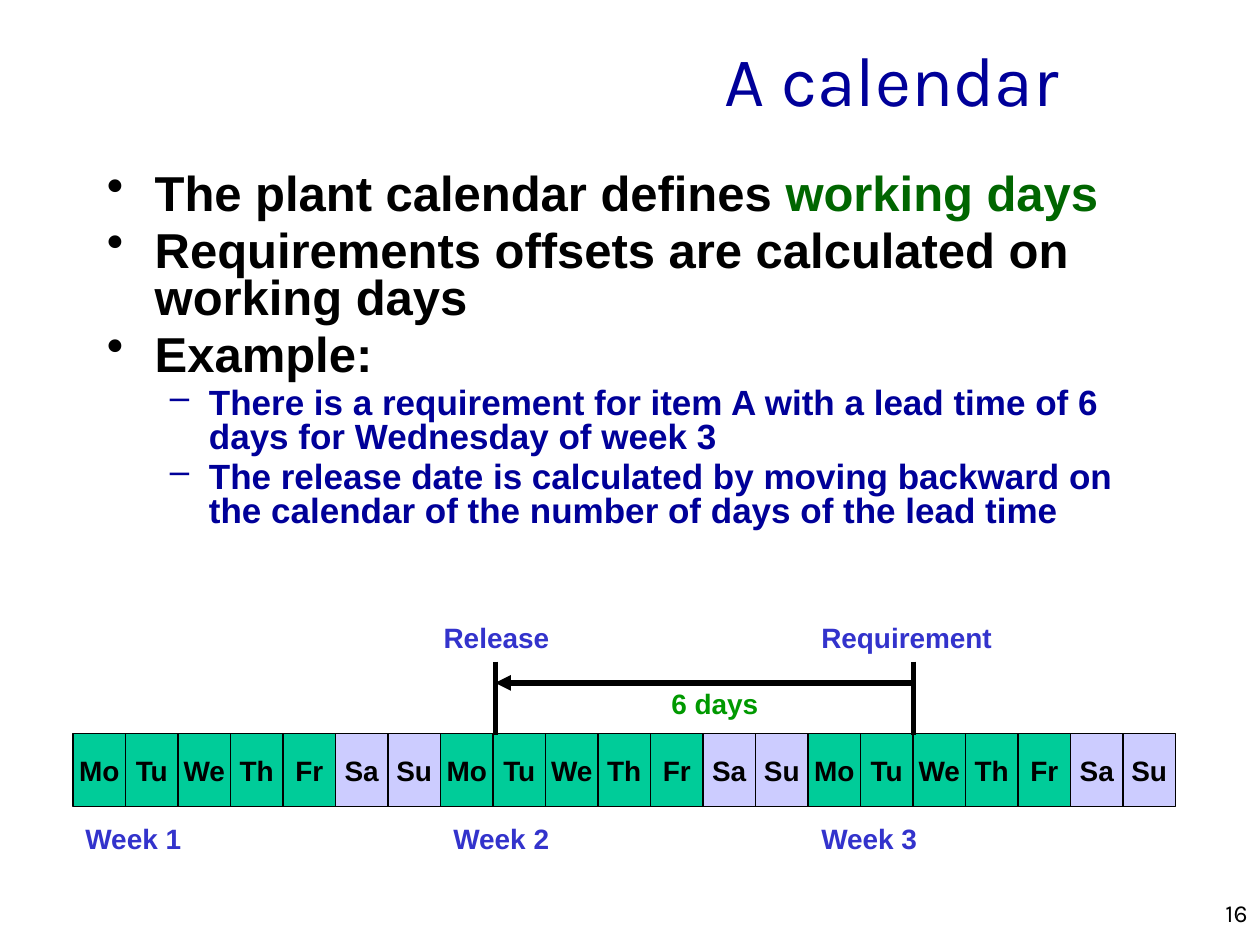
"""Build a slide explaining how a plant calendar offsets a requirement by working days."""
import dataclasses

import pptx
import pptx.dml.color
import pptx.enum.shapes
import pptx.enum.text
import pptx.oxml
import pptx.oxml.ns
import pptx.util
from pptx.util import Inches


@dataclasses.dataclass(frozen=True)
class Theme:
    black: str = "000000"
    navy: str = "000099"
    label: str = "3333CC"
    emphasis: str = "006600"
    duration: str = "009900"
    workday: str = "00CC99"
    weekend: str = "CCCCFF"
    heading_font: str = "Karla"
    body_font: str = "Arial"
    title_size: int = 40
    point_size: int = 28
    detail_size: int = 20
    label_size: int = 16
    number_size: int = 14


theme = Theme()
rgb = pptx.dml.color.RGBColor.from_string
align = pptx.enum.text.PP_ALIGN
anchor = pptx.enum.text.MSO_ANCHOR


def add_run(paragraph, text, size, color, font=theme.body_font, bold=True):
    run = paragraph.add_run()
    run.text = text
    run.font.size = pptx.util.Pt(size)
    run.font.name = font
    run.font.bold = bold
    run.font.color.rgb = rgb(color)


def add_box(left, top, width, height, wrap=True):
    box = slide.shapes.add_textbox(Inches(left), Inches(top), Inches(width), Inches(height))
    box.text_frame.word_wrap = wrap
    return box.text_frame


presentation = pptx.Presentation()
presentation.slide_width = Inches(10)
presentation.slide_height = Inches(7.5)
slide = presentation.slides.add_slide(presentation.slide_layouts[6])

number_frame = add_box(7.92, 7.08, 2.08, 0.25)
number_frame.paragraphs[0].alignment = align.RIGHT
add_run(number_frame.paragraphs[0], "16", theme.number_size, theme.black, theme.heading_font, False)

title_frame = add_box(0, 0, 8.5, 1.25)
title_frame.vertical_anchor = anchor.MIDDLE
title_frame.paragraphs[0].alignment = align.RIGHT
add_run(title_frame.paragraphs[0], "A calendar", theme.title_size, theme.navy, theme.heading_font, False)

calendar_left, calendar_top, day_height = 0.58, 5.82, 0.58
day_width = 8.75 / 21
day_names = ["Mo", "Tu", "We", "Th", "Fr", "Sa", "Su"]
calendar = slide.shapes.add_group_shape()
for index, name in enumerate(day_names * 3):
    day = calendar.shapes.add_shape(
        pptx.enum.shapes.MSO_SHAPE.RECTANGLE,
        Inches(calendar_left + index * day_width), Inches(calendar_top),
        Inches(day_width), Inches(day_height))
    day.shadow.inherit = False
    day.fill.solid()
    day.fill.fore_color.rgb = rgb(theme.weekend if name in ("Sa", "Su") else theme.workday)
    day.line.color.rgb = rgb(theme.black)
    day.line.width = pptx.util.Pt(0.75)
    day.text_frame.word_wrap = False
    day.text_frame.vertical_anchor = anchor.MIDDLE
    day.text_frame.paragraphs[0].alignment = align.CENTER
    add_run(day.text_frame.paragraphs[0], name, theme.label_size, theme.black)

points = [
    (0, [("The plant calendar defines ", theme.black), ("working days", theme.emphasis)]),
    (0, [("Requirements offsets are calculated on working days", theme.black)]),
    (0, [("Example:", theme.black)]),
    (1, [("There is a requirement for item A with a lead time of 6 days for Wednesday of week 3",
          theme.navy)]),
    (1, [("The release date is calculated by moving backward on the calendar "
          "of the number of days of the lead time", theme.navy)]),
]
levels = [("•", 0.38, 0.38, theme.point_size), ("–", 0.81, 0.31, theme.detail_size)]
body_frame = add_box(0.75, 1.33, 8.5, 3)
for index, (level, runs) in enumerate(points):
    bullet, margin, hanging, size = levels[level]
    paragraph = body_frame.add_paragraph() if index else body_frame.paragraphs[0]
    paragraph.level = level
    paragraph.line_spacing = 0.8
    paragraph.space_before = pptx.util.Pt(0.2 * size)
    properties = paragraph._p.get_or_add_pPr()
    properties.set("marL", str(Inches(margin)))
    properties.set("indent", str(-Inches(hanging)))
    pptx.oxml.ns.qn("a:buChar")
    marker = pptx.oxml.parse_xml(
        f'<a:buChar {pptx.oxml.ns.nsdecls("a")} char="{bullet}"/>')
    properties.append(marker)
    for text, color in runs:
        add_run(paragraph, text, size, color)

release_x, requirement_x = 3.93, 7.25
labels = [
    ("Week 1", 0.58, 6.47, 0.97, theme.label, align.LEFT),
    ("Week 2", 3.5, 6.47, 0.97, theme.label, align.LEFT),
    ("Week 3", 6.42, 6.47, 0.97, theme.label, align.LEFT),
    ("6 days", 5.23, 5.4, 0.89, theme.duration, align.LEFT),
    ("Requirement", 6.42, 4.88, 1.56, theme.label, align.LEFT),
    ("Release", 3.42, 4.88, 1.04, theme.label, align.CENTER),
]
for text, left, top, width, color, alignment in labels:
    label_frame = add_box(left, top, width, 0.37, wrap=False)
    label_frame.auto_size = pptx.enum.text.MSO_AUTO_SIZE.SHAPE_TO_FIT_TEXT
    label_frame.paragraphs[0].alignment = alignment
    add_run(label_frame.paragraphs[0], text, theme.label_size, color)

lines = [
    (requirement_x, 5.25, requirement_x, 5.83, False),
    (requirement_x, 5.42, release_x, 5.42, True),
    (release_x, 5.25, release_x, 5.83, False),
]
for start_x, start_y, end_x, end_y, has_arrow in lines:
    connector = slide.shapes.add_connector(
        pptx.enum.shapes.MSO_CONNECTOR.STRAIGHT,
        Inches(start_x), Inches(start_y), Inches(end_x), Inches(end_y))
    connector.line.color.rgb = rgb(theme.black)
    connector.line.width = pptx.util.Pt(3)
    if has_arrow:
        connector.line._get_or_add_ln().append(pptx.oxml.parse_xml(
            f'<a:tailEnd {pptx.oxml.ns.nsdecls("a")} type="triangle"/>'))
    connector._element.spPr.append(pptx.oxml.parse_xml(
        f'<a:effectLst {pptx.oxml.ns.nsdecls("a")}/>'))

presentation.save("out.pptx")
